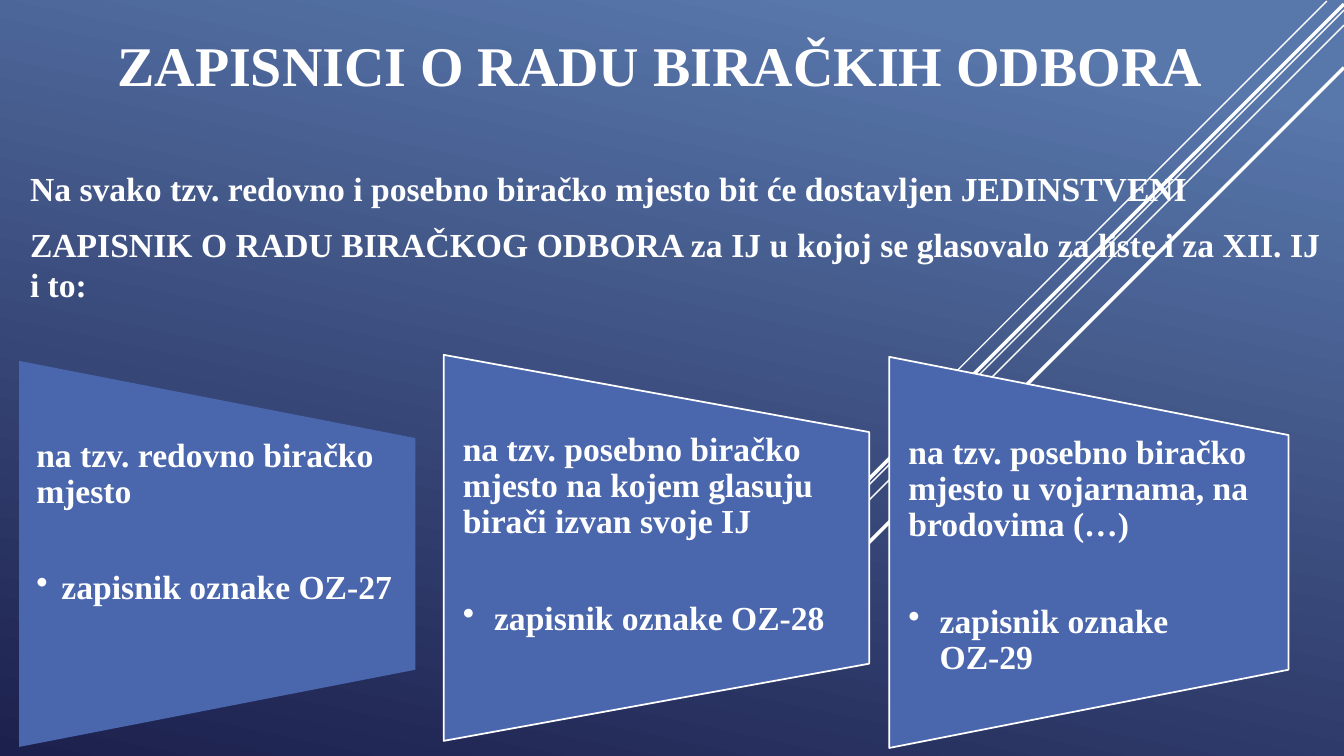
from dataclasses import dataclass

import lxml.etree
import pptx
import pptx.dml.color
import pptx.enum.shapes
import pptx.enum.text
import pptx.oxml.ns
import pptx.util

Inches = pptx.util.Inches
Pt = pptx.util.Pt
Align = pptx.enum.text.PP_ALIGN
Anchor = pptx.enum.text.MSO_ANCHOR
qn = pptx.oxml.ns.qn


@dataclass(frozen=True)
class Theme:
    font: str = "Times New Roman"
    title_size: float = 40
    body_size: float = 24
    white: str = "FFFFFF"
    card: str = "4A66AC"
    background_light: str = "5877AB"
    background_dark: str = "1C204D"


@dataclass(frozen=True)
class Diagonal:
    left: float
    top: float
    run: float
    weight: float


@dataclass(frozen=True)
class Card:
    left: float
    top: float
    width: float
    height: float
    text_width: float
    inset: float
    indent: float
    outlined: bool
    heading: str
    record: str


THEME = Theme()

DIAGONALS = [
    Diagonal(13.16, 0.01, 4.16, 1),
    Diagonal(13.33, 0.1, 6.65, 1),
    Diagonal(13.33, 0.25, 5.42, 1),
    Diagonal(13.33, 0.04, 5.3, 2.5),
    Diagonal(13.33, 0.67, 4.75, 2.5),
]

INTRODUCTION = [
    "Na svako tzv. redovno i posebno biračko mjesto bit će dostavljen JEDINSTVENI",
    "ZAPISNIK O RADU BIRAČKOG ODBORA za IJ u kojoj se glasovalo za liste i za XII. IJ i to:",
]

CARDS = [
    Card(0.19, 3.58, 3.93, 3.83, 3.93, 0.17, 0.25, False,
         "na tzv. redovno biračko mjesto", "zapisnik oznake OZ-27"),
    Card(4.4, 3.52, 4.22, 3.83, 4.08, 0.19, 0.31, True,
         "na tzv. posebno biračko mjesto na kojem glasuju birači izvan svoje IJ",
         "zapisnik oznake OZ-28"),
    Card(8.82, 3.54, 3.96, 3.88, 3.76, 0.19, 0.31, True,
         "na tzv. posebno biračko mjesto u vojarnama, na brodovima (…)",
         "zapisnik oznake OZ-29"),
]


def color(value: str) -> pptx.dml.color.RGBColor:
    return pptx.dml.color.RGBColor.from_string(value)


def write_text(frame, text: str, *, first: bool = False, size: float = THEME.body_size,
               align=Align.LEFT, before: float = 0, after: float = 0,
               spacing: float = 1.0, bullet_indent: float = 0) -> None:
    paragraph = frame.paragraphs[0] if first else frame.add_paragraph()
    paragraph.alignment = align
    paragraph.space_before = Pt(before)
    paragraph.space_after = Pt(after)
    paragraph.line_spacing = spacing
    run = paragraph.add_run()
    run.text = text
    run.font.name = THEME.font
    run.font.size = Pt(size)
    run.font.bold = True
    run.font.color.rgb = color(THEME.white)
    if bullet_indent:
        properties = paragraph._p.get_or_add_pPr()
        properties.set("marL", str(Inches(bullet_indent)))
        properties.set("indent", str(-Inches(bullet_indent)))
        lxml.etree.SubElement(properties, qn("a:buChar")).set("char", "•")


def add_text_frame(shapes, left: float, top: float, width: float, height: float,
                   inset_x: float = 0.1, inset_y: float = 0.05):
    box = shapes.add_textbox(Inches(left), Inches(top), Inches(width), Inches(height))
    frame = box.text_frame
    frame.word_wrap = True
    frame.vertical_anchor = Anchor.TOP
    frame.margin_left = frame.margin_right = Inches(inset_x)
    frame.margin_top = frame.margin_bottom = Inches(inset_y)
    return frame


def paint_background(slide) -> None:
    fill = slide.background.fill
    fill.gradient()
    fill.gradient_angle = 258
    stops = [(0.1, THEME.background_light), (1.0, THEME.background_dark)]
    for stop, (position, value) in zip(fill.gradient_stops, stops):
        stop.position = position
        stop.color.rgb = color(value)


def add_diagonal(shapes, diagonal: Diagonal) -> None:
    connector = shapes.add_connector(
        pptx.enum.shapes.MSO_CONNECTOR.STRAIGHT,
        Inches(diagonal.left), Inches(diagonal.top),
        Inches(diagonal.left - diagonal.run), Inches(diagonal.top + diagonal.run))
    connector.line.color.rgb = color(THEME.white)
    connector.line.width = Pt(diagonal.weight)
    lxml.etree.SubElement(connector._element.spPr, qn("a:effectLst"))


def add_title(slide, text: str) -> None:
    title = slide.shapes.title
    title.left, title.top = Inches(0), Inches(0)
    title.width, title.height = Inches(13.09), Inches(1.02)
    frame = title.text_frame
    frame.auto_size = pptx.enum.text.MSO_AUTO_SIZE.NONE
    frame.vertical_anchor = Anchor.BOTTOM
    write_text(frame, text, first=True, size=THEME.title_size, align=Align.CENTER)


def add_introduction(shapes) -> None:
    frame = add_text_frame(shapes, 0.2, 1.62, 13, 1.5)
    for index, text in enumerate(INTRODUCTION):
        write_text(frame, text, first=index == 0, align=Align.JUSTIFY, before=4.8, after=6)


def add_card(shapes, card: Card) -> None:
    group = shapes.add_group_shape()
    center_x = card.left + card.width / 2
    center_y = card.top + card.height / 2
    panel = group.shapes.add_shape(
        pptx.enum.shapes.MSO_SHAPE.FLOWCHART_MANUAL_OPERATION,
        Inches(center_x - card.height / 2), Inches(center_y - card.width / 2),
        Inches(card.height), Inches(card.width))
    panel.rotation = 270
    panel.shadow.inherit = False
    panel.fill.solid()
    panel.fill.fore_color.rgb = color(THEME.card)
    if card.outlined:
        panel.line.color.rgb = color(THEME.white)
        panel.line.width = Pt(1.25)
    else:
        panel.line.fill.background()
    frame = add_text_frame(group.shapes, card.left, card.top + card.height * 0.2,
                           card.text_width, card.height * 0.6, card.inset, 0)
    write_text(frame, card.heading, first=True, spacing=0.9)
    write_text(frame, card.record, before=43, spacing=0.9, bullet_indent=card.indent)


def main() -> None:
    presentation = pptx.Presentation()
    presentation.slide_width = Inches(13.33)
    presentation.slide_height = Inches(7.5)
    slide = presentation.slides.add_slide(presentation.slide_layouts.get_by_name("Title Only"))
    paint_background(slide)
    for diagonal in DIAGONALS:
        add_diagonal(slide.shapes, diagonal)
    add_title(slide, "ZAPISNICI O RADU BIRAČKIH ODBORA")
    add_introduction(slide.shapes)
    for card in CARDS:
        add_card(slide.shapes, card)
    presentation.save("out.pptx")


if __name__ == "__main__":
    main()
